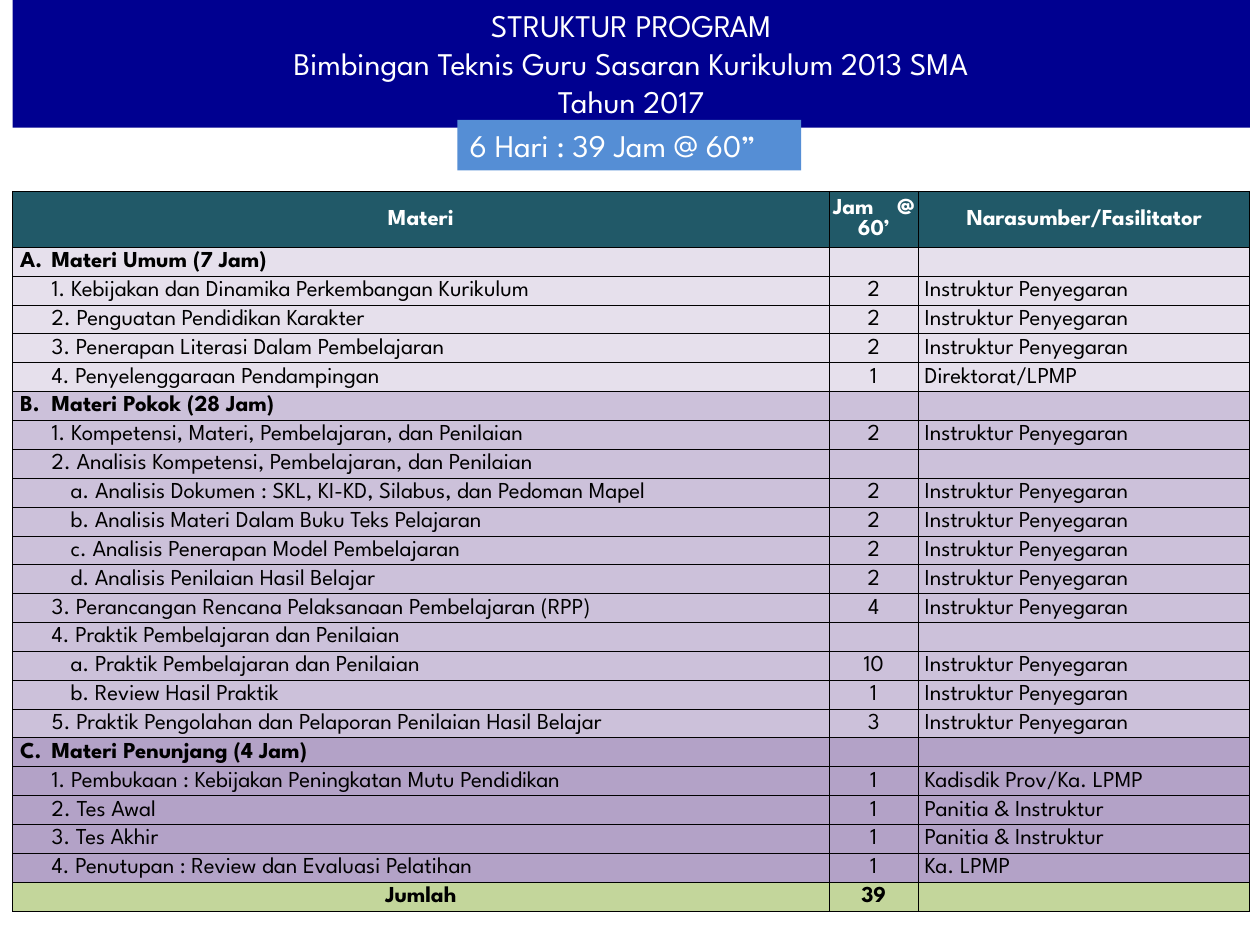
from lxml.etree import SubElement
from pptx import Presentation
from pptx.dml.color import RGBColor
from pptx.enum.shapes import MSO_SHAPE as Shape
from pptx.enum.text import MSO_ANCHOR as Anchor, MSO_AUTO_SIZE as AutoSize, PP_ALIGN as Align
from pptx.oxml.ns import qn
from pptx.util import Emu, Inches, Pt

COLORS = {
    "banner": "000090", "badge": "558ED5", "header": "215968",
    "umum": "E6E0EC", "pokok": "CCC1DA", "penunjang": "B3A2C7",
    "total": "C3D69B", "light": "FFFFFF", "dark": "000000",
}
FONT = "League Spartan"
INSTRUCTOR = "Instruktur Penyegaran"
SECTIONS = [
    ("umum", "A.\tMateri Umum (7 Jam)", [
        (1, "1. Kebijakan dan Dinamika Perkembangan Kurikulum", "2", INSTRUCTOR),
        (1, "2. Penguatan Pendidikan Karakter", "2", INSTRUCTOR),
        (1, "3. Penerapan Literasi Dalam Pembelajaran", "2", INSTRUCTOR),
        (1, "4. Penyelenggaraan Pendampingan", "1", "Direktorat/LPMP"),
    ]),
    ("pokok", "B.\tMateri Pokok (28 Jam)", [
        (1, "1. Kompetensi, Materi, Pembelajaran, dan Penilaian", "2", INSTRUCTOR),
        (1, "2. Analisis Kompetensi, Pembelajaran, dan Penilaian", "", ""),
        (2, "a. Analisis Dokumen : SKL, KI-KD, Silabus, dan Pedoman Mapel", "2", INSTRUCTOR),
        (2, "b. Analisis Materi Dalam Buku Teks Pelajaran", "2", INSTRUCTOR),
        (2, "c. Analisis Penerapan Model Pembelajaran", "2", INSTRUCTOR),
        (2, "d. Analisis Penilaian Hasil Belajar", "2", INSTRUCTOR),
        (1, "3. Perancangan Rencana Pelaksanaan Pembelajaran (RPP)", "4", INSTRUCTOR),
        (1, "4. Praktik Pembelajaran dan Penilaian", "", ""),
        (2, "a. Praktik Pembelajaran dan Penilaian", "10", INSTRUCTOR),
        (2, "b. Review Hasil Praktik", "1", INSTRUCTOR),
        (1, "5. Praktik Pengolahan dan Pelaporan Penilaian Hasil Belajar", "3", INSTRUCTOR),
    ]),
    ("penunjang", "C.\tMateri Penunjang (4 Jam)", [
        (1, "1. Pembukaan : Kebijakan Peningkatan Mutu Pendidikan", "1", "Kadisdik Prov/Ka. LPMP"),
        (1, "2. Tes Awal", "1", "Panitia & Instruktur"),
        (1, "3. Tes Akhir", "1", "Panitia & Instruktur"),
        (1, "4. Penutupan : Review dan Evaluasi Pelatihan", "1", "Ka. LPMP"),
    ]),
]
LEVEL_INDENTS = {0: (0.3, -0.25), 1: (0.3, 0), 2: (0.45, 0)}


class ProgramSlide:
    def __init__(self, deck):
        self.width, self.height = deck.slide_width, deck.slide_height
        self.slide = deck.slides.add_slide(deck.slide_layouts[5])

    def box(self, left, top, width, height):
        return (Emu(int(self.width * left / 100)), Emu(int(self.height * top / 100)),
                Emu(int(self.width * width / 100)), Emu(int(self.height * height / 100)))

    def color(self, name):
        return RGBColor.from_string(COLORS[name])

    def paint(self, target, name):
        target.fill.solid()
        target.fill.fore_color.rgb = self.color(name)

    def format(self, frame, size, color, align, bold=False):
        for paragraph in frame.paragraphs:
            paragraph.alignment = align
            for run in paragraph.runs:
                run.font.name, run.font.size, run.font.bold = FONT, Pt(size), bold
                run.font.color.rgb = self.color(color)

    def title(self, text, box):
        banner = self.slide.shapes.title
        banner.left, banner.top, banner.width, banner.height = self.box(*box)
        self.paint(banner, "banner")
        frame = banner.text_frame
        frame.text = text
        frame.auto_size = AutoSize.NONE
        frame.vertical_anchor = Anchor.TOP
        self.format(frame, 18, "light", Align.CENTER)

    def label(self, text, box):
        badge = self.slide.shapes.add_shape(Shape.RECTANGLE, *self.box(*box))
        badge.shadow.inherit = False
        badge.line.fill.background()
        self.paint(badge, "badge")
        frame = badge.text_frame
        frame.text = text
        frame.word_wrap = False
        frame.vertical_anchor = Anchor.TOP
        self.format(frame, 18, "light", Align.LEFT)

    def indent(self, paragraph, left, first):
        properties = paragraph._p.get_or_add_pPr()
        properties.set("marL", str(Inches(left)))
        properties.set("indent", str(Inches(first)))

    def cell(self, cell, text, fill, align, color="dark", bold=False):
        cell.margin_left = cell.margin_top = cell.margin_right = Inches(0.01)
        cell.margin_bottom = 0
        cell.vertical_anchor = Anchor.MIDDLE
        for side in ("a:lnL", "a:lnR", "a:lnT", "a:lnB"):
            border = SubElement(cell._tc.get_or_add_tcPr(), qn(side), w=str(Pt(0.5)))
            SubElement(SubElement(border, qn("a:solidFill")), qn("a:srgbClr"), val=COLORS["dark"])
        self.paint(cell, fill)
        cell.text_frame.text = text
        self.format(cell.text_frame, 13, color, align, bold)
        if not text:
            SubElement(cell.text_frame.paragraphs[0]._p, qn("a:endParaRPr"), sz="1300")

    def widen_first_gap(self, frame, points):
        heading = frame.paragraphs[0]
        first, rest = heading.text.split(" ", 1)
        heading.text = first
        gap, remainder = heading.add_run(), heading.add_run()
        gap.text, remainder.text = " ", rest
        gap._r.get_or_add_rPr().set("spc", str(points * 100))
        self.format(frame, 13, "light", Align.CENTER, True)

    def table(self, box, column_shares, header_share):
        row_count = 2 + sum(1 + len(topics) for _, _, topics in SECTIONS)
        frame = self.slide.shapes.add_table(row_count, 3, *self.box(*box))
        table = frame.table
        table_width, table_height = frame.width, frame.height
        for column, share in zip(table.columns, column_shares):
            column.width = int(table_width * share / 100)
        header_height = int(table_height * header_share / 100)
        body_height = (table_height - header_height) // (row_count - 1)
        for index, row in enumerate(table.rows):
            row.height = body_height if index else header_height

        for column, heading in enumerate(("Materi", "Jam @ 60’", "Narasumber/Fasilitator")):
            self.cell(table.cell(0, column), heading, "header", Align.CENTER, "light", True)
        self.widen_first_gap(table.cell(0, 1).text_frame, 10)

        row = 1
        for fill, heading, topics in SECTIONS:
            for level, topic, hours, speaker in [(0, heading, "", "")] + topics:
                self.cell(table.cell(row, 0), topic, fill, Align.LEFT, bold=level == 0)
                self.indent(table.cell(row, 0).text_frame.paragraphs[0], *LEVEL_INDENTS[level])
                self.cell(table.cell(row, 1), hours, fill, Align.CENTER)
                self.cell(table.cell(row, 2), speaker, fill, Align.LEFT)
                table.cell(row, 2).margin_left = Inches(0.05)
                row += 1
        for column, total in enumerate(("Jumlah", "39", "")):
            self.cell(table.cell(row, column), total, "total", Align.CENTER, bold=True)


def main():
    deck = Presentation()
    deck.slide_width, deck.slide_height = Inches(10), Inches(7.5)
    program = ProgramSlide(deck)
    program.title("STRUKTUR PROGRAM\nBimbingan Teknis Guru Sasaran Kurikulum 2013 SMA\nTahun 2017",
                  (1, 0, 98.2, 13.5))
    program.label("6 Hari : 39 Jam @ 60”", (36.3, 12.7, 27.3, 5.35))
    program.table((1, 20.25, 98.2, 76.1), (65.98, 7.23, 26.79), 7.75)
    deck.save("out.pptx")


if __name__ == "__main__":
    main()
